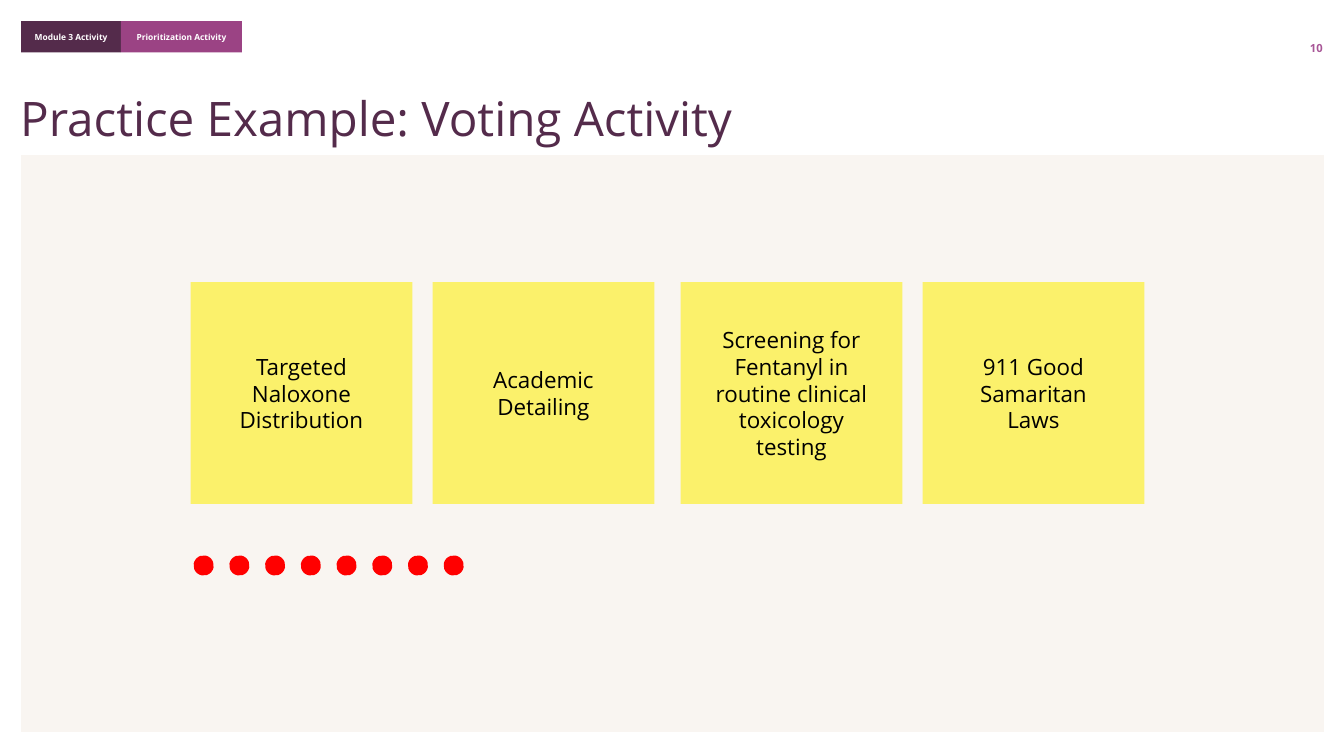
from lxml.etree import SubElement
from pptx import Presentation
from pptx.dml.color import RGBColor
from pptx.enum.shapes import MSO_SHAPE as Shape
from pptx.enum.text import MSO_ANCHOR as Anchor, MSO_AUTO_SIZE as AutoSize, PP_ALIGN as Align
from pptx.oxml.ns import qn
from pptx.util import Inches, Pt

FONT = "Open Sans"
COLORS = {
    "panel": "F4ECE4",
    "plum": "542B4B",
    "magenta": "9B4384",
    "page_number": "A85697",
    "note": "FBF16B",
    "dot": "FF0000",
    "black": "000000",
    "white": "FFFFFF",
}
TABS = [("Module 3 Activity", 0.99, "plum"), ("Prioritization Activity", 1.2, "magenta")]
NOTE_PAIRS = [
    ("Targeted Naloxone Distribution", "Academic Detailing"),
    ("Screening for Fentanyl in routine clinical toxicology testing", "911 Good Samaritan Laws"),
]
NOTE_SIZE = 2.2
NOTE_PITCH = 2.4
PAIR_PITCH = 4.86
DOT_COUNT = 8
DOT_SIZE = 0.2


def color(name):
    return RGBColor.from_string(COLORS[name])


def write_text(shape, text, size, ink, bold=False, align=Align.CENTER,
               anchor=Anchor.MIDDLE, insets=(0, 0.05, 0, 0.05), line_spacing=None):
    frame = shape.text_frame
    frame.word_wrap = True
    frame.auto_size = AutoSize.NONE
    frame.vertical_anchor = anchor
    frame.margin_left, frame.margin_top, frame.margin_right, frame.margin_bottom = map(Inches, insets)
    paragraph = frame.paragraphs[0]
    paragraph.alignment = align
    paragraph.line_spacing = line_spacing
    run = paragraph.add_run()
    run.text = text
    run.font.name = FONT
    run.font.size = Pt(size)
    run.font.bold = bold
    run.font.color.rgb = color(ink)


def add_filled_shape(slide, kind, box, fill):
    shape = slide.shapes.add_shape(kind, *map(Inches, box))
    shape.shadow.inherit = False
    shape.fill.solid()
    shape.fill.fore_color.rgb = color(fill)
    shape.line.fill.background()
    return shape


def add_panel(slide, box):
    panel = add_filled_shape(slide, Shape.SNIP_1_RECTANGLE, box, "panel")
    panel.adjustments[0] = 0
    fill_color = panel.fill._xPr.find(qn("a:solidFill")).find(qn("a:srgbClr"))
    SubElement(fill_color, qn("a:alpha"), val="50000")


def add_tabs(slide, left, top, height):
    for text, width, fill in TABS:
        tab = add_filled_shape(slide, Shape.RECTANGLE, (left, top, width, height), fill)
        write_text(tab, text, 6, "white", bold=True)
        left += width


def add_page_number(slide, box):
    number = slide.shapes.add_textbox(*map(Inches, box))
    write_text(number, "10", 8, "page_number", bold=True, align=Align.RIGHT,
               anchor=Anchor.BOTTOM, insets=(0.1, 0, 0, 0))


def add_title(slide, box):
    title = slide.shapes.title
    title.left, title.top, title.width, title.height = map(Inches, box)
    write_text(title, "Practice Example: Voting Activity", 34, "plum", align=Align.LEFT,
               insets=(0, 0.05, 0.1, 0.05), line_spacing=0.9)


def add_notes(slide, left, top):
    for pair_index, pair in enumerate(NOTE_PAIRS):
        for note_index, text in enumerate(pair):
            note_left = left + pair_index * PAIR_PITCH + note_index * NOTE_PITCH
            box = (note_left, top, NOTE_SIZE, NOTE_SIZE)
            note = add_filled_shape(slide, Shape.RECTANGLE, box, "note")
            write_text(note, text, 16, "black", insets=(0.3, 0.2, 0.3, 0.2))


def add_voting_dots(slide, left, top, width):
    pitch = (width - DOT_SIZE) / (DOT_COUNT - 1)
    for index in range(DOT_COUNT):
        box = (left + index * pitch, top, DOT_SIZE, DOT_SIZE)
        dot = add_filled_shape(slide, Shape.OVAL, box, "dot")
        dot.rotation = 340.7


def main():
    presentation = Presentation()
    presentation.slide_width = Inches(13.33)
    presentation.slide_height = Inches(7.5)
    slide = presentation.slides.add_slide(presentation.slide_layouts[5])
    add_panel(slide, (0.21, 1.54, 12.92, 5.72))
    add_tabs(slide, 0.21, 0.21, 0.31)
    add_page_number(slide, (12.25, 0.21, 0.87, 0.33))
    add_title(slide, (0.2, 0.92, 9.68, 0.57))
    add_notes(slide, 1.89, 2.8)
    add_voting_dots(slide, 1.92, 5.51, 2.68)
    presentation.save("out.pptx")


if __name__ == "__main__":
    main()
